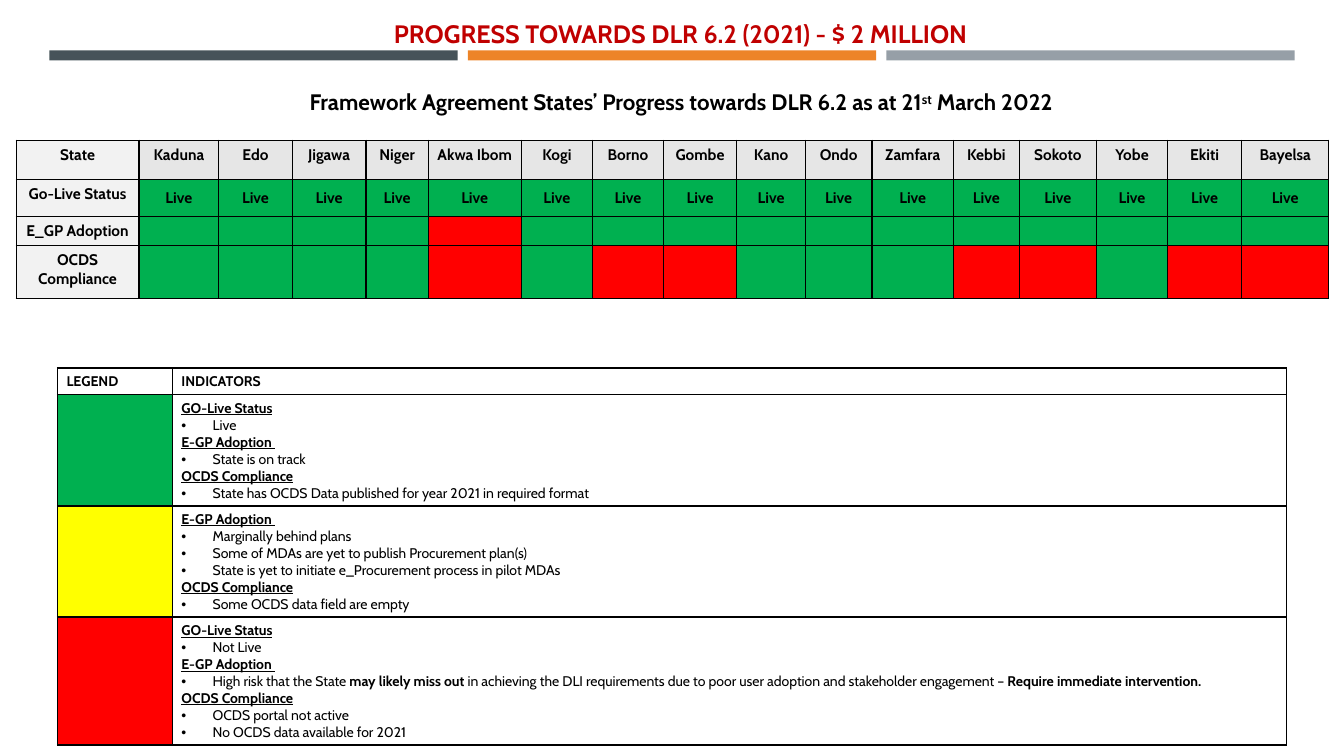
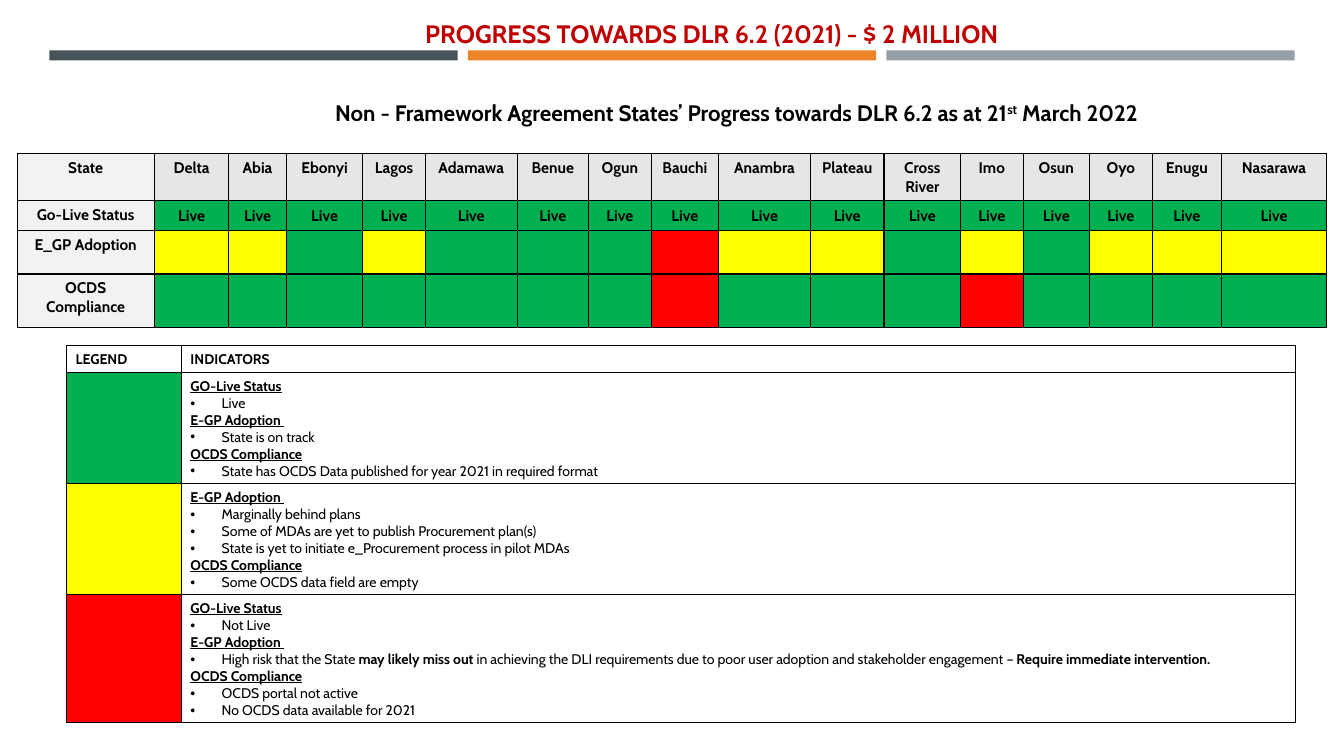
"""Build two slides on the states' progress towards DLR 6.2."""
import pptx
import pptx.util
import pptx.dml.color
import pptx.enum.shapes
import pptx.enum.text
import pptx.oxml.ns
from lxml import etree

PX = 9144
FONT = "Cabin"
COLOURS = {
    "title": "C00000", "text": "000000", "white": "FFFFFF",
    "slate": "465359", "orange": "ED8428", "grey": "969FA7",
    "label": "F2F2F2", "header": "E6E6E6",
    "G": "00B050", "Y": "FFFF00", "R": "FF0000",
}
TITLE = "PROGRESS TOWARDS DLR 6.2 (2021) - $ 2 MILLION"
LEGEND_COLUMNS = [114, 1105]
LEGEND_ROWS = [26, 110, 110, 127]
LEGEND = [
    ("G", [
        ("GO-Live Status", ["Live"]),
        ("E-GP Adoption ", ["State is on track"]),
        ("OCDS Compliance", ["State has OCDS Data published for year 2021 in required format"]),
    ]),
    ("Y", [
        ("E-GP Adoption ", [
            "Marginally behind plans",
            "Some of MDAs are yet to publish Procurement plan(s)",
            "State is yet to initiate e_Procurement process in pilot MDAs",
        ]),
        ("OCDS Compliance", ["Some OCDS data field are empty"]),
    ]),
    ("R", [
        ("GO-Live Status", ["Not Live"]),
        ("E-GP Adoption ", [
            "High risk that the State **may likely miss out **in achieving the DLI requirements "
            "due to poor user adoption and stakeholder engagement – **Require immediate intervention.",
        ]),
        ("OCDS Compliance", ["OCDS portal not active", "No OCDS data available for 2021"]),
    ]),
]
PAGES = [
    {
        "title_left": 320,
        "heading": "Framework Agreement States’ Progress towards DLR 6.2 as at 21",
        "heading_at": (150, 83),
        "table_at": (16, 139),
        "columns": [122, 79, 73, 73, 62, 92, 71, 70, 73, 68, 66, 81, 65, 77, 70, 74, 86],
        "rows": [39, 37, 27, 53],
        "states": ["Kaduna", "Edo", "Jigawa", "Niger", "Akwa Ibom", "Kogi", "Borno", "Gombe",
                   "Kano", "Ondo", "Zamfara", "Kebbi", "Sokoto", "Yobe", "Ekiti", "Bayelsa"],
        "adoption": "GGGGRGGGGGGGGGGG",
        "compliance": "GGGGRGRRGGGRRGRR",
        "legend_at": (57, 365),
    },
    {
        "title_left": 351,
        "heading": "Non - Framework Agreement States’ Progress towards DLR 6.2 as at 21",
        "heading_at": (205, 93),
        "table_at": (17, 152),
        "columns": [136, 74, 57, 76, 62, 91, 71, 62, 67, 91, 73, 76, 62, 66, 62, 69, 104],
        "rows": [46, 30, 43, 53],
        "states": ["Delta", "Abia", "Ebonyi", "Lagos", "Adamawa", "Benue", "Ogun", "Bauchi",
                   "Anambra", "Plateau", "Cross River", "Imo", "Osun", "Oyo", "Enugu", "Nasarawa"],
        "adoption": "YYGYGGGRYYGYGYYY",
        "compliance": "GGGGGGGRGGGRGGGG",
        "legend_at": (66, 343),
    },
]


def px(*lengths):
    """Turn pixel lengths into a list of EMU lengths."""
    return [pptx.util.Emu(length * PX) for length in lengths]


def rgb(name):
    """Return the named colour."""
    return pptx.dml.color.RGBColor.from_string(COLOURS[name])


def add_child(parent, tag, **attributes):
    """Append a DrawingML element to a parent."""
    return etree.SubElement(parent, pptx.oxml.ns.qn(tag), attributes)


def add_span(para, text, size, bold=True, underline=False, colour="text"):
    """Append one formatted run to a paragraph."""
    span = para.add_run()
    span.text = text
    span.font.name = FONT
    span.font.size = pptx.util.Pt(size)
    span.font.bold = bold
    span.font.underline = underline
    span.font.color.rgb = rgb(colour)
    return span


def add_bands(page):
    """Draw the three bands and move them to the page's layout."""
    for index, colour in enumerate(["slate", "orange", "grey"]):
        band = page.shapes.add_shape(
            pptx.enum.shapes.MSO_SHAPE.RECTANGLE, *px(49 + index * 415, 50, 405, 10))
        band.shadow.inherit = False
        band.fill.solid()
        band.fill.fore_color.rgb = rgb(colour)
        band.line.fill.background()
        page.slide_layout.shapes._spTree.append(band._element)


def add_title(page, left):
    """Place and fill the title placeholder."""
    box = page.shapes.title
    box.left, box.top, box.width, box.height = px(left, 0, 710, 64)
    frame = box.text_frame
    frame.word_wrap = True
    frame.auto_size = pptx.enum.text.MSO_AUTO_SIZE.NONE
    frame.vertical_anchor = pptx.enum.text.MSO_ANCHOR.MIDDLE
    para = frame.paragraphs[0]
    para.alignment = pptx.enum.text.PP_ALIGN.CENTER
    para.line_spacing = 1.06
    add_span(para, TITLE, 18, colour="title")


def add_heading(page, text, left, top):
    """Add the centred heading that ends in the report date."""
    frame = page.shapes.add_textbox(*px(left, top, 1051, 37)).text_frame
    frame.word_wrap = True
    para = frame.paragraphs[0]
    para.alignment = pptx.enum.text.PP_ALIGN.CENTER
    add_span(para, text, 16)
    ordinal = add_span(para, "st", 16)
    ordinal._r.get_or_add_rPr().set("baseline", "30000")
    add_span(para, " March 2022", 16)


def add_grid(page, left, top, columns, rows):
    """Add a plain table with the given column widths and row heights."""
    table = page.shapes.add_table(
        len(rows), len(columns), *px(left, top, sum(columns), sum(rows))).table
    table.first_row = table.horz_banding = False
    for column, width in zip(table.columns, px(*columns)):
        column.width = width
    for row, height in zip(table.rows, px(*rows)):
        row.height = height
    return table


def style_cell(cell, colour):
    """Give a cell its borders, margins and fill."""
    properties = cell._tc.get_or_add_tcPr()
    for tag in ("a:lnL", "a:lnR", "a:lnT", "a:lnB"):
        line = add_child(properties, tag, w=str(pptx.util.Pt(1)))
        add_child(add_child(line, "a:solidFill"), "a:srgbClr", val=COLOURS["text"])
    cell.margin_left, cell.margin_right, cell.margin_top, cell.margin_bottom = px(9, 9, 5, 5)
    cell.fill.solid()
    cell.fill.fore_color.rgb = rgb(colour)


def fill_cell(cell, text, size, colour, centred=False, middle=False):
    """Style a cell and write its bold text, if any."""
    style_cell(cell, colour)
    para = cell.text_frame.paragraphs[0]
    if not text:
        add_child(para._p, "a:endParaRPr", sz=str(size * 100))
        return
    if centred:
        para.alignment = pptx.enum.text.PP_ALIGN.CENTER
    if middle:
        cell.vertical_anchor = pptx.enum.text.MSO_ANCHOR.MIDDLE
    add_span(para, text, size)


def add_status_table(page, content):
    """Add the table of states and their status colours."""
    states = content["states"]
    count = len(states)
    rows = [
        ("State", states, ["header"] * count),
        ("Go-Live Status", ["Live"] * count, "G" * count),
        ("E_GP Adoption", [""] * count, content["adoption"]),
        ("OCDS Compliance", [""] * count, content["compliance"]),
    ]
    table = add_grid(page, *content["table_at"], content["columns"], content["rows"])
    for row, (label, texts, colours) in enumerate(rows):
        fill_cell(table.cell(row, 0), label, 11, "label", centred=True)
        for column, (text, colour) in enumerate(zip(texts, colours), 1):
            fill_cell(table.cell(row, column), text, 11, colour,
                      centred=True, middle=text == "Live")


def add_bullet(frame, text):
    """Append a bulleted paragraph, with bold between double asterisks."""
    para = frame.add_paragraph()
    properties = para._p.get_or_add_pPr()
    indent = 31 * PX
    properties.set("marL", str(indent))
    properties.set("indent", str(-indent))
    add_child(properties, "a:buFont", typeface="Arial")
    add_child(properties, "a:buChar", char="•")
    for index, part in enumerate(text.split("**")):
        add_span(para, part, 10, bold=index % 2 == 1)


def add_legend(page, left, top):
    """Add the table that explains the status colours."""
    table = add_grid(page, left, top, LEGEND_COLUMNS, LEGEND_ROWS)
    for column, text in enumerate(["LEGEND", "INDICATORS"]):
        fill_cell(table.cell(0, column), text, 10, "white")
    for row, (colour, groups) in enumerate(LEGEND, 1):
        fill_cell(table.cell(row, 0), "", 10, colour)
        cell = table.cell(row, 1)
        style_cell(cell, "white")
        frame = cell.text_frame
        for index, (indicator, items) in enumerate(groups):
            para = frame.add_paragraph() if index else frame.paragraphs[0]
            add_span(para, indicator, 10, underline=True)
            for item in items:
                add_bullet(frame, item)


def main():
    """Build and save the deck."""
    deck = pptx.Presentation()
    deck.slide_width, deck.slide_height = px(1333, 750)
    layout = deck.slide_layouts[5]
    for index, content in enumerate(PAGES):
        page = deck.slides.add_slide(layout)
        if index == 0:
            add_bands(page)
        add_title(page, content["title_left"])
        add_heading(page, content["heading"], *content["heading_at"])
        add_status_table(page, content)
        add_legend(page, *content["legend_at"])
    deck.save("out.pptx")


if __name__ == "__main__":
    main()
